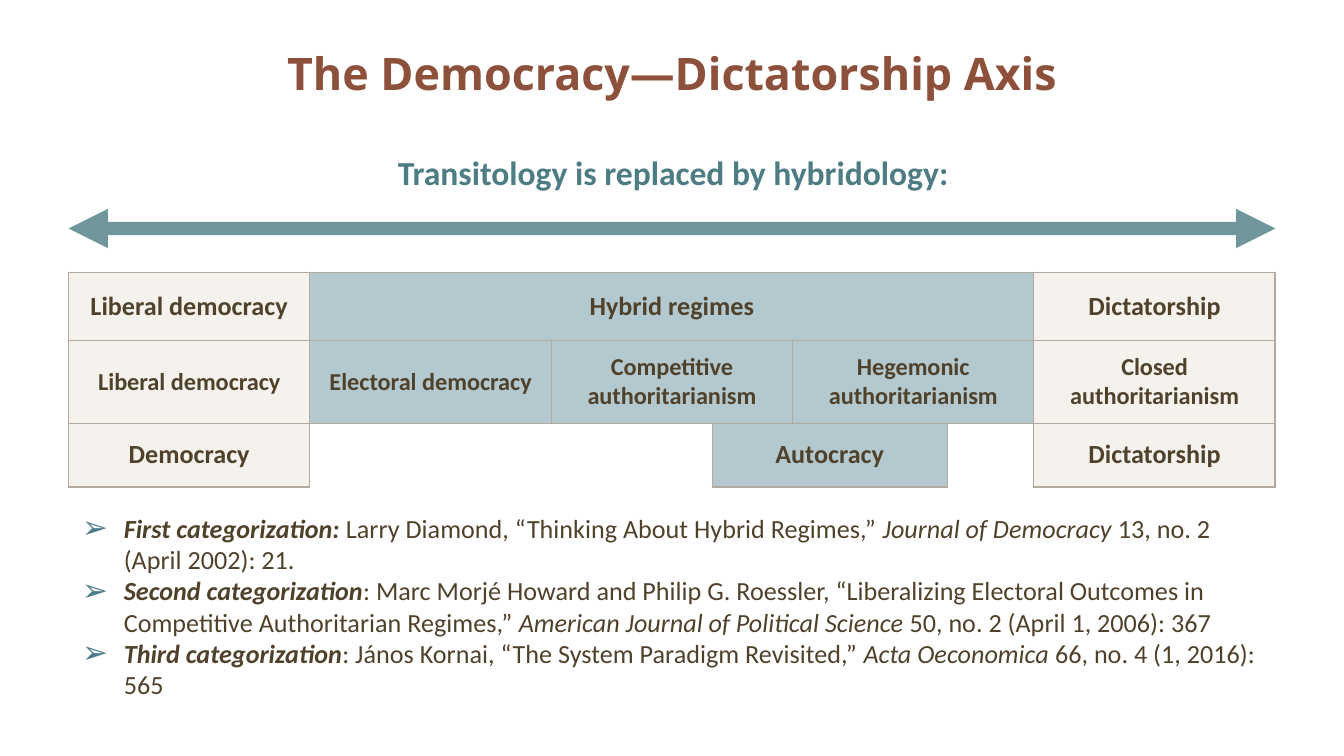
from lxml import etree
from pptx import Presentation
from pptx import util as u
from pptx.dml.color import RGBColor
from pptx.enum import shapes, text
from pptx.oxml import ns

Pt = u.Pt
RUST = RGBColor(0x8D, 0x50, 0x3B)
TEAL = RGBColor(0x4D, 0x7C, 0x84)
BULLET = RGBColor(0x4D, 0x7C, 0x8B)
BROWN = RGBColor(0x50, 0x41, 0x2B)
TAUPE = RGBColor(0xB3, 0xA9, 0x9D)
CREAM = RGBColor(0xEF, 0xEA, 0xE4)
BLUE = RGBColor(0x6B, 0x95, 0xA1)
OPACITY = {CREAM: 60, BLUE: 50, TEAL: 80}

LEFT, WIDTH = 36.75, 646.5
COLUMNS = [129.3, 129.3, 86.2, 43.1, 83, 46.3, 129.3]
ROWS = [36.6, 44, 34.2]

# Per cell: first column, columns spanned, label, fill, drawn edges
REGIMES = [
    (14, [(0, 1, "Liberal democracy", CREAM, "LRTB"),
          (1, 5, "Hybrid regimes", BLUE, "LRTB"),
          (6, 1, "Dictatorship", CREAM, "LRTB")]),
    (13, [(0, 1, "Liberal democracy", CREAM, "LRTB"),
          (1, 1, "Electoral democracy", BLUE, "LRTB"),
          (2, 2, "Competitive authoritarianism", BLUE, "LRTB"),
          (4, 2, "Hegemonic authoritarianism", BLUE, "LRTB"),
          (6, 1, "Closed authoritarianism", CREAM, "LRTB")]),
    (14, [(0, 1, "Democracy", CREAM, "LRTB"),
          (1, 1, "", None, "LT"),
          (2, 1, "", None, "RT"),
          (3, 2, "Autocracy", BLUE, "LRTB"),
          (5, 1, "", None, "LRT"),
          (6, 1, "Dictatorship", CREAM, "LRTB")]),
]

# Per source: category, article, journal, issue
SOURCES = [
    ("First categorization: ", "Larry Diamond, “Thinking About Hybrid Regimes,” ",
     "Journal of Democracy", " 13, no. 2 (April 2002): 21."),
    ("Second categorization",
     ": Marc Morjé Howard and Philip G. Roessler, “Liberalizing Electoral Outcomes in "
     "Competitive Authoritarian Regimes,” ",
     "American Journal of Political Science", " 50, no. 2 (April 1, 2006): 367"),
    ("Third categorization", ": János Kornai, “The System Paradigm Revisited,” ",
     "Acta Oeconomica", " 66, no. 4 (1, 2016): 565"),
]
SOURCE_STYLES = [dict(bold=True, italic=True), {}, dict(italic=True), {}]


def add_xml(parent, tag, **attributes):
    return etree.SubElement(parent, ns.qn(tag), attributes)


def fade(filled, color):
    """Apply the color's opacity to the solid fill of an XML element."""
    rgb = filled.find(ns.qn("a:solidFill"))[0]
    add_xml(rgb, "a:alpha", val=str(OPACITY[color] * 1000))


class Deck:
    body = dict(name="Calibri", size=Pt(14), bold=False, italic=False)

    def __init__(self, width, height):
        self.file = Presentation()
        self.file.slide_width, self.file.slide_height = Pt(width), Pt(height)
        self.slide = self.file.slides.add_slide(self.file.slide_layouts[6])

    def add_words(self, paragraph, words, color=BROWN, **changes):
        run = paragraph.add_run()
        run.text = words
        for key, value in {**self.body, **changes}.items():
            setattr(run.font, key, value)
        run.font.color.rgb = color

    def frame(self, *place):
        frame = self.slide.shapes.add_textbox(*map(Pt, place)).text_frame
        frame.word_wrap = True
        return frame

    def heading(self, place, words, color, **changes):
        frame = self.frame(*place)
        frame.vertical_anchor = text.MSO_ANCHOR.MIDDLE
        frame.paragraphs[0].alignment = text.PP_ALIGN.CENTER
        self.add_words(frame.paragraphs[0], words, color, bold=True, **changes)

    def axis(self, left, right, y):
        """Draw a horizontal line with an arrowhead at each end."""
        arrow = self.slide.shapes.add_connector(
            shapes.MSO_CONNECTOR.STRAIGHT, Pt(left), Pt(y), Pt(right), Pt(y))
        arrow.line.width = Pt(7)
        arrow.line.color.rgb = TEAL
        properties = arrow._element.spPr
        line = properties.find(ns.qn("a:ln"))
        fade(line, TEAL)
        for end in ("a:headEnd", "a:tailEnd"):
            add_xml(line, end, type="triangle")
        add_xml(properties, "a:effectLst")

    def borders(self, cell, edges, outer):
        properties = cell._tc.get_or_add_tcPr()
        for edge in "LRTB":
            width = Pt(1 if edge in outer else 0.5)
            line = add_xml(properties, f"a:ln{edge}", w=str(width))
            if edge in edges:
                add_xml(add_xml(line, "a:solidFill"), "a:srgbClr", val=str(TAUPE))
            else:
                add_xml(line, "a:noFill")

    def regime_table(self, left, top):
        table = self.slide.shapes.add_table(
            len(ROWS), len(COLUMNS), Pt(left), Pt(top),
            Pt(sum(COLUMNS)), Pt(sum(ROWS))).table
        table.first_row = table.horz_banding = False
        for column, width in zip(table.columns, COLUMNS):
            column.width = Pt(width)
        for row, height in zip(table.rows, ROWS):
            row.height = Pt(height)
        for row, (size, regimes) in enumerate(REGIMES):
            for first, span, label, color, edges in regimes:
                cell = table.cell(row, first)
                last = first + span - 1
                if span > 1:
                    cell.merge(table.cell(row, last))
                on_rim = {"L": first == 0, "R": last == len(COLUMNS) - 1,
                          "T": row == 0, "B": row == len(ROWS) - 1}
                self.borders(cell, edges, [e for e in on_rim if on_rim[e]])
                if color is None:
                    cell.fill.background()
                    continue
                cell.fill.solid()
                cell.fill.fore_color.rgb = color
                fade(cell._tc.tcPr, color)
                cell.vertical_anchor = text.MSO_ANCHOR.MIDDLE
                paragraph = cell.text_frame.paragraphs[0]
                paragraph.alignment = text.PP_ALIGN.CENTER
                self.add_words(paragraph, label, bold=True, size=Pt(size))

    def source_list(self, *place):
        frame = self.frame(*place)
        for index, parts in enumerate(SOURCES):
            paragraph = frame.add_paragraph() if index else frame.paragraphs[0]
            properties = paragraph._p.get_or_add_pPr()
            indent = Pt(22.5)
            properties.set("marL", str(indent))
            properties.set("indent", str(-indent))
            add_xml(add_xml(properties, "a:buClr"), "a:srgbClr", val=str(BULLET))
            add_xml(properties, "a:buSzPct", val="120000")
            add_xml(properties, "a:buFont", typeface="Calibri")
            add_xml(properties, "a:buChar", char="➢")
            for words, style in zip(parts, SOURCE_STYLES):
                self.add_words(paragraph, words, **style)


def main():
    deck = Deck(720, 405)
    deck.heading((8.6, 0, 702.7, 77.8), "The Democracy—Dictatorship Axis", RUST,
                 name="Open Sans", size=Pt(24))
    deck.source_list(LEFT, 270.7, WIDTH, 108.7)
    deck.axis(LEFT, LEFT + WIDTH, 122.4)
    deck.heading((9.4, 77.8, 702.7, 29), "Transitology is replaced by hybridology:",
                 TEAL, size=Pt(18))
    deck.regime_table(LEFT, 146)
    deck.file.save("out.pptx")


if __name__ == "__main__":
    main()
